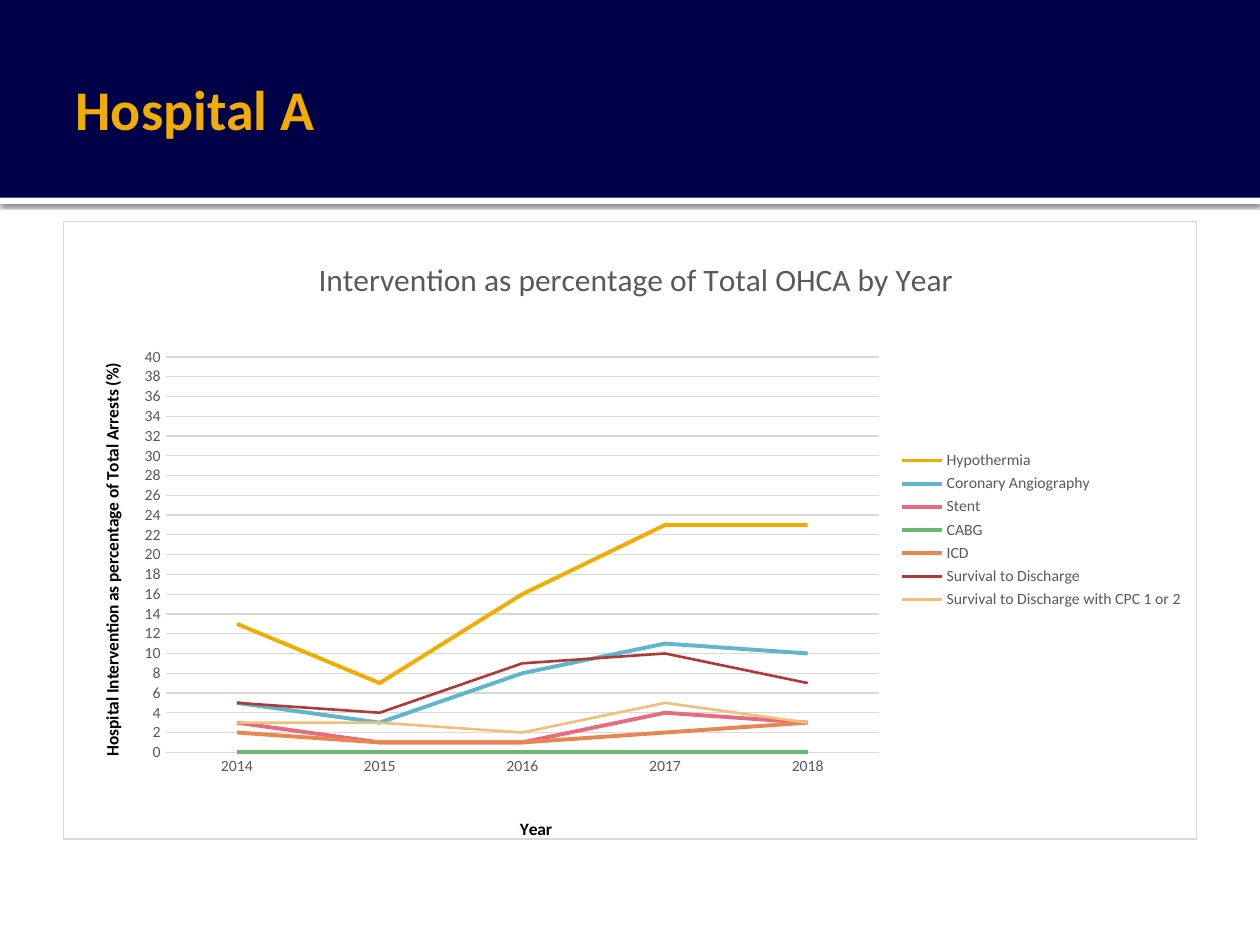
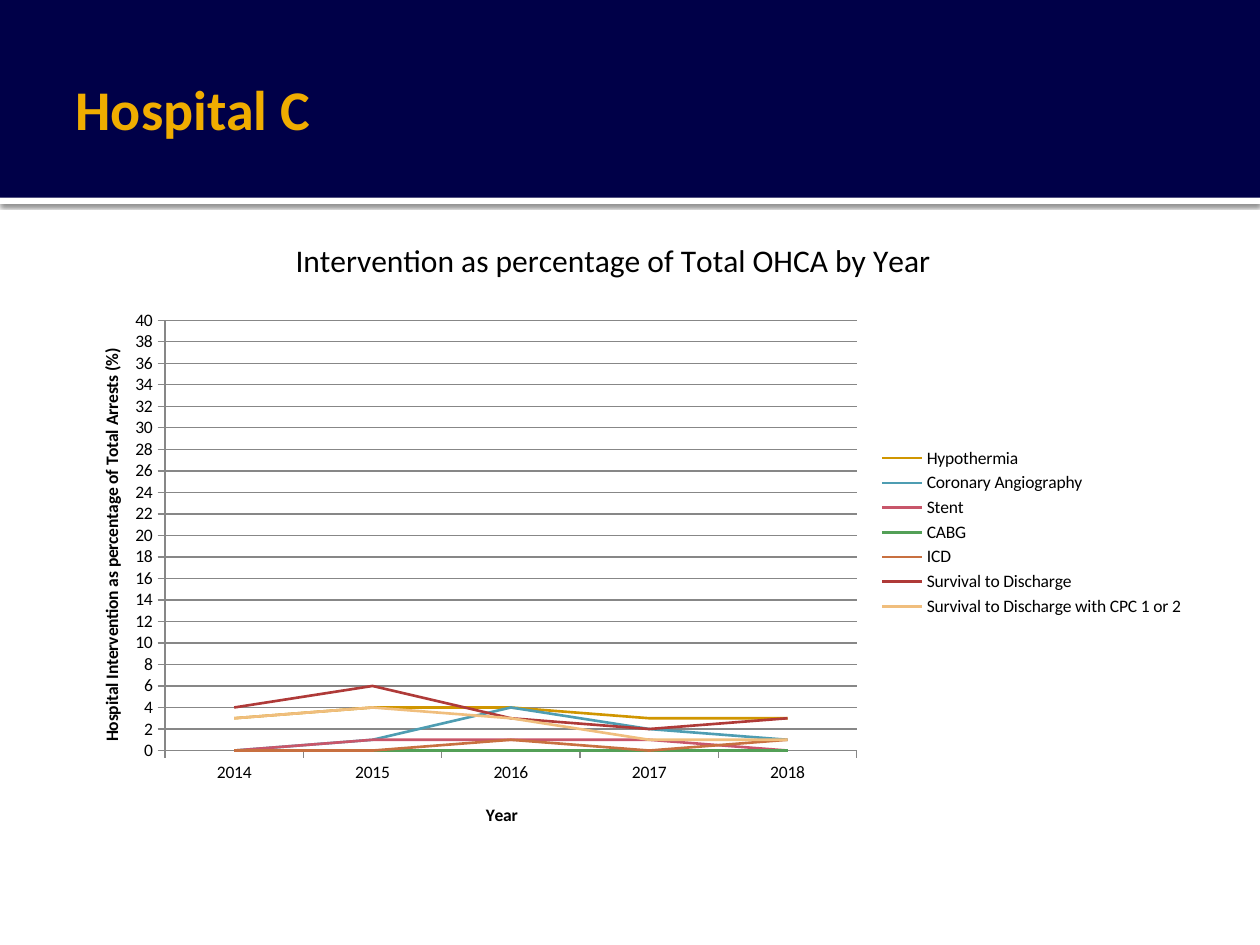
from lxml import etree
from pptx import Presentation
from pptx.chart.data import CategoryChartData
from pptx.dml.color import RGBColor
from pptx.enum.chart import XL_CHART_TYPE, XL_LEGEND_POSITION, XL_TICK_MARK
from pptx.enum.shapes import MSO_SHAPE
from pptx.enum.text import MSO_ANCHOR, PP_ALIGN
from pptx.oxml import parse_xml
from pptx.oxml.ns import nsdecls, qn
from pptx.util import Pt

LINE_CHART = XL_CHART_TYPE.LINE
LEGEND_RIGHT = XL_LEGEND_POSITION.RIGHT
TICK_NONE, TICK_OUTSIDE = XL_TICK_MARK.NONE, XL_TICK_MARK.OUTSIDE
RECTANGLE = MSO_SHAPE.RECTANGLE
MIDDLE, LEFT = MSO_ANCHOR.MIDDLE, PP_ALIGN.LEFT

FONT = "Calibri"
NAVY, GOLD, WHITE, BLACK = "000048", "F0AD00", "FFFFFF", "000000"
GREY_TEXT, PALE_GREY, MID_GREY = "595959", "D9D9D9", "878787"
DARK_RED, SAND = "AF3A38", "F0BE7D"
SLIDE_WIDTH, SLIDE_HEIGHT, BAND_HEIGHT = 720, 540, 113

YEARS = ["2014", "2015", "2016", "2017", "2018"]
MEASURES = ["Hypothermia", "Coronary Angiography", "Stent", "CABG", "ICD",
            "Survival to Discharge", "Survival to Discharge with CPC 1 or 2"]

# Layout entries are fractions of the chart: left, top (and width, height)
HOSPITALS = [
    {
        "name": "Hospital A",
        "values": [[13, 7, 16, 23, 23], [5, 3, 8, 11, 10], [3, 1, 1, 4, 3],
                   [0, 0, 0, 0, 0], [2, 1, 1, 2, 3], [5, 4, 9, 10, 7],
                   [3, 3, 2, 5, 3]],
        "colors": [GOLD, "60B5CC", "E66C7D", "6BB76D", "E88651", DARK_RED, SAND],
        "widths": [2.25] * 5 + [1.5] * 2,
        "text": GREY_TEXT, "label_size": 9, "grid": PALE_GREY,
        "border": PALE_GREY, "tick": TICK_NONE, "value_line": None,
        "plot_at": (0.09, 0.22, 0.63, 0.64), "title_at": (0.22, 0.05),
        "year_at": (0.4, 0.96), "percent_at": (0.03, 0.23),
    },
    {
        "name": "Hospital C",
        "values": [[3, 4, 4, 3, 3], [0, 1, 4, 2, 1], [0, 1, 1, 1, 0],
                   [0, 0, 0, 0, 0], [0, 0, 1, 0, 1], [4, 6, 3, 2, 3],
                   [3, 4, 3, 1, 1]],
        "colors": ["D09600", "4E9DB2", "C8566A", "53A057", "C87040", DARK_RED, SAND],
        "widths": [1.5] * 7,
        "text": BLACK, "label_size": 10, "grid": MID_GREY,
        "border": None, "tick": TICK_OUTSIDE, "value_line": MID_GREY,
        "plot_at": (0.09, 0.16, 0.61, 0.69), "title_at": (0.2, 0.02),
        "year_at": (0.37, 0.93), "percent_at": (0.03, 0.2),
    },
]


def color(value):
    return RGBColor.from_string(value)


def style_font(font, size, ink, bold=False):
    font.name, font.size, font.bold = FONT, Pt(size), bold
    font.color.rgb = color(ink)


def style_line(line, ink, width=0.75):
    if ink is None:
        line.fill.background()
    else:
        line.color.rgb = color(ink)
        line.width = Pt(width)


def add_run(para, words, size, ink, bold=False):
    span = para.add_run()
    span.text = words
    style_font(span.font, size, ink, bold)


# Header bands shared through the layout
def add_band(slide, top, height, fill):
    band = slide.shapes.add_shape(RECTANGLE, 0, Pt(top), Pt(SLIDE_WIDTH), Pt(height))
    band.shadow.inherit = False
    band.fill.solid()
    band.fill.fore_color.rgb = color(fill)
    band.line.fill.background()
    return band


def add_shadow(shape):
    effects = shape.element.spPr.find(qn("a:effectLst"))
    effects.append(parse_xml(
        f'<a:outerShdw {nsdecls("a")} blurRad="{Pt(2.5)}" dist="{Pt(0.8)}" '
        f'dir="5400000" rotWithShape="0"><a:srgbClr val="{BLACK}">'
        '<a:alpha val="60000"/></a:srgbClr></a:outerShdw>'))


def put_bands_on_layout(slide):
    strip = add_band(slide, BAND_HEIGHT, 3.6, WHITE)
    add_shadow(strip)
    header = add_band(slide, 0, BAND_HEIGHT, NAVY)
    tree = slide.slide_layout.shapes.element
    for order, band in enumerate((strip, header)):
        band.element.nvSpPr.cNvPr.set("id", str(100 + order))
        tree.insert(2 + order, band.element)


def set_title(slide, words):
    title = slide.shapes.title
    title.left, title.top = Pt(36), Pt(12.24)
    title.width, title.height = Pt(648), Pt(98.64)
    frame = title.text_frame
    frame.vertical_anchor = MIDDLE
    frame.margin_left = Pt(7.2)
    frame.margin_right = frame.margin_top = frame.margin_bottom = Pt(3.6)
    para = frame.paragraphs[0]
    para.alignment = LEFT
    add_run(para, words, 32, GOLD, True)


# Chart parts
def place(element, index, fractions, inner=False):
    """Give a chart part a fixed place, as fractions of the chart."""
    old = element.find(qn("c:layout"))
    if old is not None:
        element.remove(old)
    layout = parse_xml(f'<c:layout {nsdecls("c")}><c:manualLayout/></c:layout>')
    entries = [("layoutTarget", "inner")] if inner else []
    entries += [("xMode", "edge"), ("yMode", "edge")]
    entries += zip("xywh", fractions)
    for tag, value in entries:
        etree.SubElement(layout[0], qn("c:" + tag)).set("val", str(value))
    element.insert(index, layout)


def write_chart_text(title, words, size, ink, bold, fractions):
    add_run(title.text_frame.paragraphs[0], words, size, ink, bold)
    place(title.element, 1, fractions)


def frame_chart(chart, border):
    if border:
        fill = f'<a:solidFill><a:srgbClr val="{WHITE}"/></a:solidFill>'
        edge = f'<a:solidFill><a:srgbClr val="{border}"/></a:solidFill>'
    else:
        fill = edge = "<a:noFill/>"
    area = parse_xml(f'<c:spPr {nsdecls("c", "a")}>{fill}'
                     f'<a:ln w="{Pt(0.75)}">{edge}</a:ln></c:spPr>')
    chart.element.find(qn("c:txPr")).addprevious(area)


def style_axis(axis, hospital, line_ink, words, fractions):
    axis.major_tick_mark = hospital["tick"]
    axis.minor_tick_mark = TICK_NONE
    style_font(axis.tick_labels.font, hospital["label_size"], hospital["text"])
    style_line(axis.format.line, line_ink)
    write_chart_text(axis.axis_title, words, 10, BLACK, True, fractions)


def add_line_chart(slide, hospital):
    data = CategoryChartData()
    data.categories = YEARS
    for measure, values in zip(MEASURES, hospital["values"]):
        data.add_series(measure, values)
    chart = slide.shapes.add_chart(
        LINE_CHART, Pt(36), Pt(126), Pt(648), Pt(356.4), data).chart
    style_font(chart.font, 10, BLACK)
    frame_chart(chart, hospital["border"])

    chart.has_title = True
    write_chart_text(chart.chart_title, "Intervention as percentage of Total OHCA by Year",
                     18, hospital["text"], False, hospital["title_at"])
    chart.has_legend = True
    chart.legend.position = LEGEND_RIGHT
    chart.legend.include_in_layout = False
    style_font(chart.legend.font, hospital["label_size"], hospital["text"])

    style_axis(chart.category_axis, hospital, hospital["grid"], "Year", hospital["year_at"])
    percent = chart.value_axis
    style_axis(percent, hospital, hospital["value_line"],
               "Hospital Intervention as percentage of Total Arrests (%)",
               hospital["percent_at"])
    percent.axis_title.element.find(".//" + qn("a:bodyPr")).set("rot", "-5400000")
    percent.minimum_scale, percent.maximum_scale, percent.major_unit = 0, 40, 2
    percent.has_major_gridlines = True
    style_line(percent.major_gridlines.format.line, hospital["grid"])

    plot = chart.plots[0]
    plot.vary_by_categories = False
    for series, ink, width in zip(plot.series, hospital["colors"], hospital["widths"]):
        series.smooth = False
        style_line(series.format.line, ink, width)
    place(chart.element.find(".//" + qn("c:plotArea")), 0, hospital["plot_at"], inner=True)


def main():
    deck = Presentation()
    deck.slide_width, deck.slide_height = Pt(SLIDE_WIDTH), Pt(SLIDE_HEIGHT)
    title_only = deck.slide_layouts[5]
    for number, hospital in enumerate(HOSPITALS):
        page = deck.slides.add_slide(title_only)
        if number == 0:
            put_bands_on_layout(page)
        set_title(page, hospital["name"])
        add_line_chart(page, hospital)
    deck.save("out.pptx")


if __name__ == "__main__":
    main()
